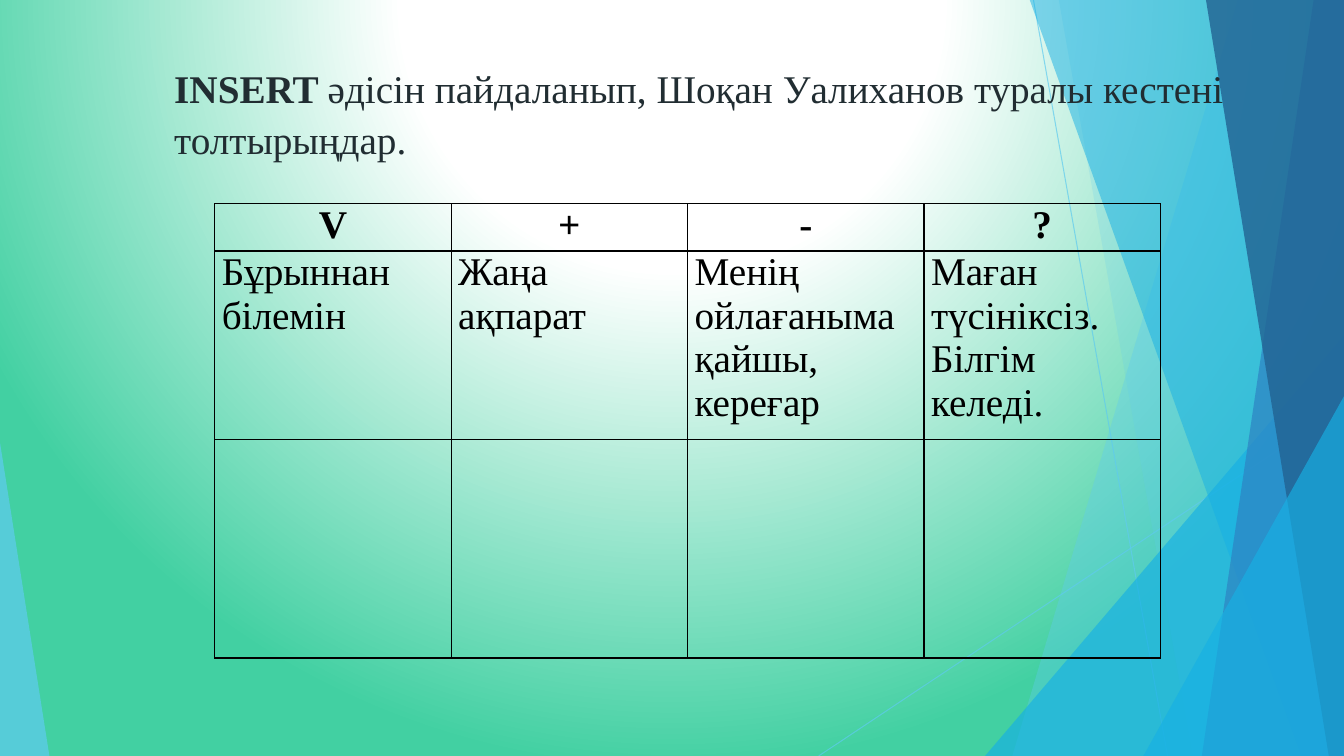
from pptx import Presentation
from pptx.dml.color import RGBColor
from pptx.enum import shapes, text
from pptx.oxml import parse_xml
from pptx.oxml.ns import qn, nsdecls
from pptx.util import Inches, Pt

WHITE = RGBColor(0xFF, 0xFF, 0xFF)
MINT = RGBColor(0x42, 0xD0, 0xA2)
SKY = RGBColor(0x5F, 0xCB, 0xEF)
CYAN = RGBColor(0x17, 0xB0, 0xE4)
BLUE = RGBColor(0x2E, 0x83, 0xC3)
NAVY = RGBColor(0x22, 0x62, 0x92)
INK = RGBColor(0x21, 0x2D, 0x32)
BLACK = RGBColor(0, 0, 0)
FONT = "Times New Roman"
WIDE, HIGH = 13.33, 7.5


def fade(part, alpha):
    """Make the solid colour of a fill or line see-through."""
    color = part.find(".//" + qn("a:srgbClr"))
    color.append(parse_xml(f'<a:alpha {nsdecls("a")} val="{alpha * 1000}"/>'))


def tint(shape, color, alpha):
    shape.shadow.inherit = False
    shape.fill.solid()
    shape.fill.fore_color.rgb = color
    fade(shape._element.spPr, alpha)
    shape.line.fill.background()


def write(para, words, color, bold=False):
    run = para.add_run()
    run.text = words
    font = run.font
    font.name, font.size, font.bold = FONT, Pt(28), bold
    font.color.rgb = color


# Background glow
def glow(slide):
    slide.background.fill.gradient()
    grad = slide._element.find(".//" + qn("a:gradFill"))
    stops = "".join(
        f'<a:gs pos="{pos * 1000}"><a:srgbClr val="{color}"/></a:gs>'
        for pos, color in ((0, WHITE), (35, WHITE), (100, MINT)))
    grad.getparent().replace(grad, parse_xml(
        f'<a:gradFill {nsdecls("a")} rotWithShape="1"><a:gsLst>{stops}</a:gsLst>'
        '<a:path path="circle"><a:fillToRect l="50000" t="-80000" r="50000" '
        'b="180000"/></a:path></a:gradFill>'))


# Facets along the slide edges
def ray(slide, x1, y1, x2, y2):
    line = slide.shapes.add_connector(
        shapes.MSO_CONNECTOR.STRAIGHT, *map(Inches, (x1, y1, x2, y2)))
    line.line.color.rgb = SKY
    line.line.width = Pt(0.75)
    props = line._element.spPr
    fade(props, 70)
    props.append(parse_xml(f'<a:effectLst {nsdecls("a")}/>'))


def band(slide, top, base, color, alpha):
    """Fill from a slanted left edge to the right side of the slide."""
    edge = [(top, -0.01), (WIDE, -0.01), (WIDE, HIGH), (base, HIGH)]
    spots = [(Inches(x), Inches(y)) for x, y in edge]
    form = slide.shapes.build_freeform(*spots[0])
    form.add_line_segments(spots[1:])
    tint(form.convert_to_shape(), color, alpha)


def wedge(slide, left, top, width, peak, color, alpha):
    """Stand a triangle on the bottom of the slide."""
    shape = slide.shapes.add_shape(
        shapes.MSO_SHAPE.ISOSCELES_TRIANGLE,
        *map(Inches, (left, top, width, HIGH - top)))
    shape.adjustments[0] = peak
    tint(shape, color, alpha)


def facets(slide):
    ray(slide, 10.25, 0, 11.58, HIGH)
    ray(slide, WIDE, 4.03, 8.12, HIGH)
    band(slide, 12.28, 10.04, SKY, 36)
    band(slide, 10.5, 11.83, SKY, 20)
    wedge(slide, 9.77, 3.33, 3.56, 1, CYAN, 66)
    band(slide, 10.21, 12.91, CYAN, 50)
    band(slide, 13.03, 11.92, BLUE, 70)
    band(slide, 11.96, 13.18, NAVY, 80)
    wedge(slide, 11.34, 3.93, 1.99, 1, CYAN, 66)
    wedge(slide, 0, 4.39, 0.49, 0, SKY, 70)


# Task heading
def heading(slide, left, top, width, height):
    box = slide.shapes.add_textbox(*map(Inches, (left, top, width, height)))
    frame = box.text_frame
    frame.word_wrap = True
    para = frame.paragraphs[0]
    para.line_spacing = 1.07
    write(para, "INSERT ", INK, True)
    write(para, "әдісін пайдаланып, Шоқан Уалиханов туралы кестені толтырыңдар.", INK)


# INSERT table
def border(cell):
    props = cell._tc.get_or_add_tcPr()
    for spot, side in enumerate("LRTB"):
        props.insert(spot, parse_xml(
            f'<a:ln{side} {nsdecls("a")} w="{Pt(1)}"><a:solidFill>'
            f'<a:srgbClr val="{BLACK}"/></a:solidFill></a:ln{side}>'))


def chart(slide, left, top, width, height):
    rows = [
        ["V", "+", "-", "?"],
        ["Бұрыннан білемін", "Жаңа ақпарат", "Менің ойлағаныма қайшы, кереғар",
         "Маған түсініксіз.\nБілгім келеді."],
        [""] * 4,
    ]
    table = slide.shapes.add_table(
        3, 4, *map(Inches, (left, top, width, height))).table
    table.first_row = table.horz_banding = False
    for row, size in zip(table.rows, (0.47, 1.86, height - 2.33)):
        row.height = Inches(size)
    for r, row in enumerate(rows):
        for c, words in enumerate(row):
            cell = table.cell(r, c)
            cell.fill.background()
            border(cell)
            cell.margin_left = cell.margin_right = Inches(0.07)
            cell.margin_top = cell.margin_bottom = 0
            if not words:
                continue
            frame = cell.text_frame
            for n, line in enumerate(words.split("\n")):
                para = frame.add_paragraph() if n else frame.paragraphs[0]
                if r == 0:
                    para.alignment = text.PP_ALIGN.CENTER
                write(para, line, BLACK, r == 0)


def main():
    deck = Presentation()
    deck.slide_width, deck.slide_height = Inches(WIDE), Inches(HIGH)
    slide = deck.slides.add_slide(deck.slide_layouts[6])
    glow(slide)
    facets(slide)
    heading(slide, 1.63, 0.56, 11.36, 1.04)
    chart(slide, 2.13, 2.02, 9.38, 4.5)
    deck.save("out.pptx")


if __name__ == "__main__":
    main()
